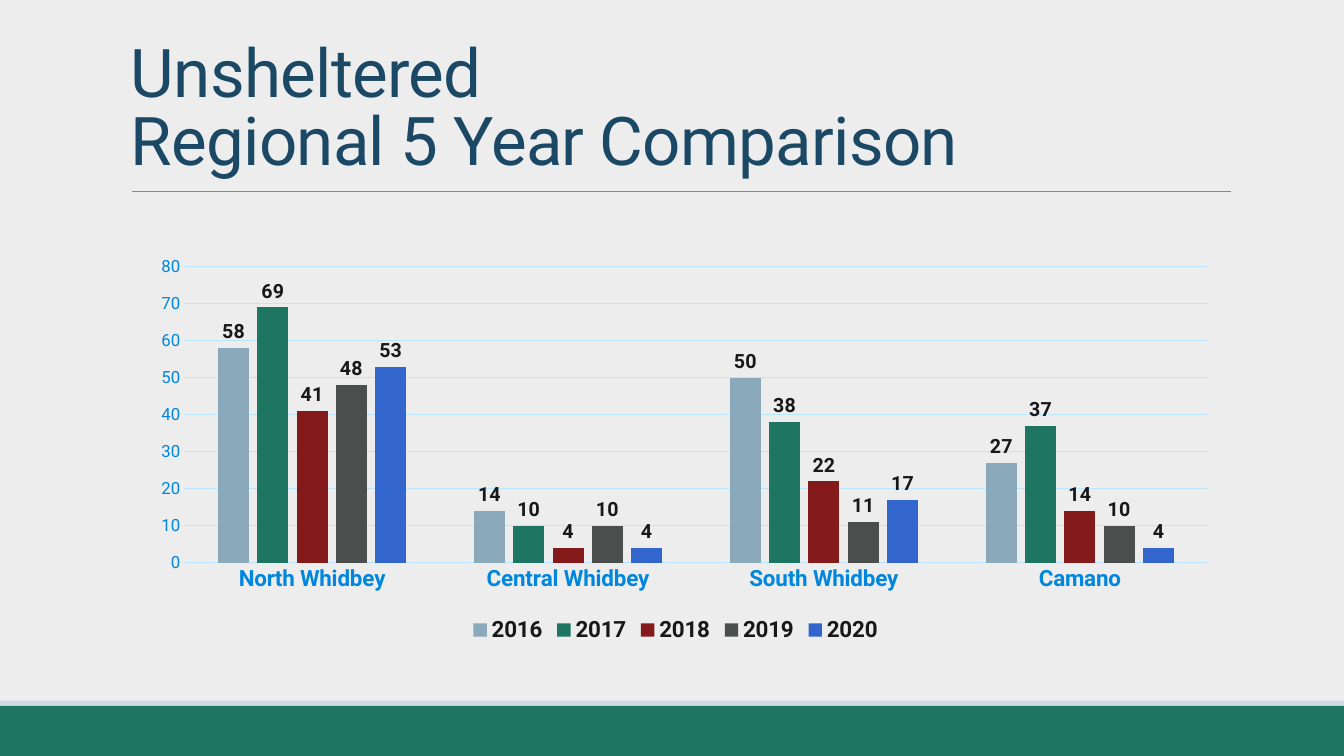
from lxml import etree
from pptx import Presentation
from pptx.chart.data import CategoryChartData
from pptx.dml.color import RGBColor
from pptx.enum.chart import XL_CHART_TYPE, XL_LABEL_POSITION, XL_LEGEND_POSITION, XL_TICK_MARK
from pptx.enum.shapes import MSO_CONNECTOR, MSO_SHAPE
from pptx.enum.text import MSO_ANCHOR
from pptx.oxml import parse_xml
from pptx.oxml.ns import nsdecls, qn
from pptx.util import Inches, Pt

COLORS = {
    "background": "EDEDED", "green": "1E7561", "pale": "CEDBE2", "rule": "7F8C95",
    "title": "1B4965", "chart": "002842", "axis": "0086DD", "grid": "BCE5FF", "label": "181818",
}
REGIONS = ["North Whidbey", "Central Whidbey", "South Whidbey", "Camano"]
YEARS = [
    ("2016", "8AA9BA", (58, 14, 50, 27)),
    ("2017", "1E7561", (69, 10, 38, 37)),
    ("2018", "841A1A", (41, 4, 22, 14)),
    ("2019", "4A4E4D", (48, 10, 11, 10)),
    ("2020", "3366CC", (53, 4, 17, 4)),
]


def color(name):
    return RGBColor.from_string(COLORS[name])


def style_font(font, size, color_name, bold=False):
    font.name = "Roboto"
    font.size = Pt(size)
    font.bold = bold
    font.color.rgb = color(color_name)


presentation = Presentation()
presentation.slide_width = Inches(13.33)
presentation.slide_height = Inches(7.5)
slide = presentation.slides.add_slide(presentation.slide_layouts[6])
slide.background.fill.solid()
slide.background.fill.fore_color.rgb = color("background")

# Footer bands
for top, height, fill in [(7, 0.5, "green"), (6.95, 0.05, "pale")]:
    band = slide.shapes.add_shape(
        MSO_SHAPE.RECTANGLE, 0, Inches(top), presentation.slide_width, Inches(height))
    band.shadow.inherit = False
    band.fill.solid()
    band.fill.fore_color.rgb = color(fill)
    band.line.fill.background()

# Rule under the title
rule = slide.shapes.add_connector(
    MSO_CONNECTOR.STRAIGHT, Inches(1.31), Inches(1.9), Inches(12.21), Inches(1.9))
rule.line.color.rgb = color("rule")
rule.line.width = Pt(0.5)
etree.SubElement(rule.element.spPr, qn("a:effectLst"))

# Title
title = slide.shapes.add_textbox(Inches(1.2), Inches(0.24), Inches(11), Inches(1.59))
title.text_frame.word_wrap = True
title.text_frame.vertical_anchor = MSO_ANCHOR.BOTTOM
paragraph = title.text_frame.paragraphs[0]
paragraph.text = "Unsheltered \vRegional 5 Year Comparison"
paragraph.line_spacing = 0.85
style_font(paragraph.font, 48, "title")
for run in paragraph.runs:
    run.font.size = Pt(48)
    run.font.element.set("spc", "-50") if hasattr(run.font, "element") else \
        run._r.get_or_add_rPr().set("spc", "-50")

# Chart
chart_data = CategoryChartData()
chart_data.categories = REGIONS
for year, _, counts in YEARS:
    chart_data.add_series(year, counts)
chart = slide.shapes.add_chart(
    XL_CHART_TYPE.COLUMN_CLUSTERED, Inches(1.2), Inches(2.02), Inches(11), Inches(4.4),
    chart_data).chart
chart.has_title = False
style_font(chart.font, 10, "chart")

# Columns and their value labels
plot = chart.plots[0]
plot.gap_width = 219
plot.overlap = -27
plot.vary_by_categories = False
for series, (_, fill, _) in zip(plot.series, YEARS):
    series.format.fill.solid()
    series.format.fill.fore_color.rgb = RGBColor.from_string(fill)
    labels = series.data_labels
    labels.show_value = True
    labels.position = XL_LABEL_POSITION.OUTSIDE_END
    style_font(labels.font, 14, "label", bold=True)

# Axes
category_axis, value_axis = chart.category_axis, chart.value_axis
for axis, size, bold in [(category_axis, 16, True), (value_axis, 12, False)]:
    axis.major_tick_mark = axis.minor_tick_mark = XL_TICK_MARK.NONE
    style_font(axis.tick_labels.font, size, "axis", bold)
value_axis.minimum_scale, value_axis.maximum_scale, value_axis.major_unit = 0, 80, 10
value_axis.format.line.fill.background()
for line in (category_axis.format.line, value_axis.major_gridlines.format.line):
    line.color.rgb = color("grid")
    line.width = Pt(0.75)

# Legend
chart.has_legend = True
chart.legend.position = XL_LEGEND_POSITION.BOTTOM
chart.legend.include_in_layout = False
style_font(chart.legend.font, 16, "label", bold=True)

# Fixed inner plot area
plot_area = chart.element.find(".//" + qn("c:plotArea"))
for layout in plot_area.findall(qn("c:layout")):
    plot_area.remove(layout)
plot_area.insert(0, parse_xml(
    f'<c:layout {nsdecls("c")}><c:manualLayout><c:layoutTarget val="inner"/>'
    '<c:xMode val="edge"/><c:yMode val="edge"/><c:x val="0.057"/><c:y val="0.142"/>'
    '<c:w val="0.923"/><c:h val="0.668"/></c:manualLayout></c:layout>'))

presentation.save("out.pptx")
